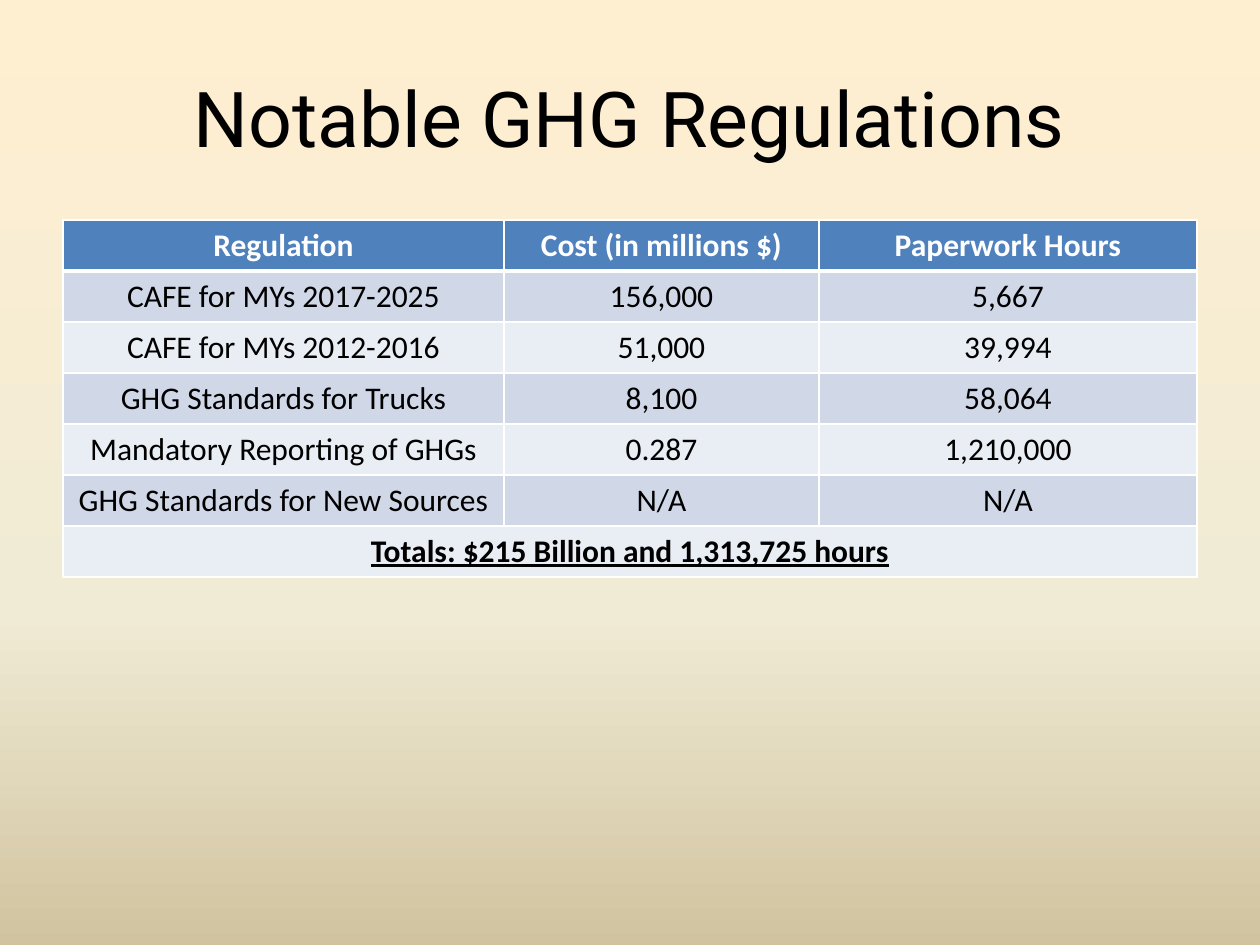
from copy import deepcopy
from dataclasses import dataclass

from lxml import etree
from pptx import Presentation
from pptx.dml.color import RGBColor
from pptx.enum.text import MSO_ANCHOR, PP_ALIGN
from pptx.oxml.ns import qn
from pptx.util import Emu, Pt

MIDDLE = MSO_ANCHOR.MIDDLE
CENTER = PP_ALIGN.CENTER
SCALE = 914400 / 126


@dataclass(frozen=True)
class Theme:
    stops: tuple = ((0, "FFEFD1"), (0.65, "F0EBD5"), (1, "D1C39F"))
    ink: str = "000000"
    white: str = "FFFFFF"
    head: str = "4F81BD"
    bands: tuple = ("D0D8E8", "E9EDF4")
    title_font: str = "Roboto"
    body_font: str = "Calibri"
    title_size: int = 44
    body_size: int = 18
    thin: int = 1
    thick: int = 3


@dataclass(frozen=True)
class Rule:
    name: str
    cost: str
    hours: str


THEME = Theme()
WIDTHS = (441, 315, 378)
ROW = 51
HEAD = Rule("Regulation", "Cost (in millions $)", "Paperwork Hours")
RULES = (
    Rule("CAFE for MYs 2017-2025", "156,000", "5,667"),
    Rule("CAFE for MYs 2012-2016", "51,000", "39,994"),
    Rule("GHG Standards for Trucks", "8,100", "58,064"),
    Rule("Mandatory Reporting of GHGs", "0.287", "1,210,000"),
    Rule("GHG Standards for New Sources", "N/A", "N/A"),
)
TOTAL = "Totals: $215 Billion and 1,313,725 hours"


def px(count: int) -> Emu:
    return Emu(round(count * SCALE))


def rgb(code: str) -> RGBColor:
    return RGBColor.from_string(code)


def write(frame, text: str, *, font: str = THEME.body_font,
          size: int = THEME.body_size, color: str = THEME.ink,
          bold: bool = False, under: bool = False) -> None:
    para = frame.paragraphs[0]
    para.alignment = CENTER
    run = para.add_run()
    run.text = text
    face = run.font
    face.name, face.size = font, Pt(size)
    face.bold, face.underline = bold, under
    face.color.rgb = rgb(color)


def paint_back(slide) -> None:
    fill = slide.background.fill
    fill.gradient()
    fill.gradient_angle = 270
    stops = next(slide.element.iter(qn("a:gsLst")))
    stops.insert(1, deepcopy(stops[0]))
    for stop, (place, color) in zip(fill.gradient_stops, THEME.stops):
        stop.position = place
        stop.color.rgb = rgb(color)


def edge(cell, side: str, width: int) -> None:
    props = cell._tc.get_or_add_tcPr()
    line = etree.SubElement(props, qn(f"a:ln{side}"), w=str(Pt(width)))
    solid = etree.SubElement(line, qn("a:solidFill"))
    etree.SubElement(solid, qn("a:srgbClr"), val=THEME.white)


def style(cell, row: int) -> None:
    """Give a cell its borders and then its fill, the order the schema asks."""
    heavy = {(0, "B"), (1, "T")}
    for side in "LRTB":
        edge(cell, side, THEME.thick if (row, side) in heavy else THEME.thin)
    cell.fill.solid()
    color = THEME.bands[(row - 1) % 2] if row else THEME.head
    cell.fill.fore_color.rgb = rgb(color)


def add_title(slide, text: str) -> None:
    frame = slide.shapes.add_textbox(px(63), px(38), px(1134), px(157)).text_frame
    frame.word_wrap = True
    frame.vertical_anchor = MIDDLE
    write(frame, text, font=THEME.title_font, size=THEME.title_size)


def add_grid(slide) -> None:
    count = len(RULES) + 2
    grid = slide.shapes.add_table(count, len(WIDTHS), px(63), px(220),
                                  px(sum(WIDTHS)), px(ROW * count)).table
    for col, width in zip(grid.columns, WIDTHS):
        col.width = px(width)
    for index, row in enumerate(grid.rows):
        row.height = px(ROW)
        for cell in row.cells:
            style(cell, index)
    for index, rule in enumerate((HEAD, *RULES)):
        top = index == 0
        for col, text in enumerate((rule.name, rule.cost, rule.hours)):
            write(grid.cell(index, col).text_frame, text, bold=top,
                  color=THEME.white if top else THEME.ink)
    last = grid.cell(count - 1, 0)
    last.merge(grid.cell(count - 1, len(WIDTHS) - 1))
    write(last.text_frame, TOTAL, bold=True, under=True)


def main() -> None:
    deck = Presentation()
    deck.slide_width, deck.slide_height = px(1260), px(945)
    slide = deck.slides.add_slide(deck.slide_layouts[6])
    paint_back(slide)
    add_title(slide, "Notable GHG Regulations")
    add_grid(slide)
    deck.save("out.pptx")


if __name__ == "__main__":
    main()
